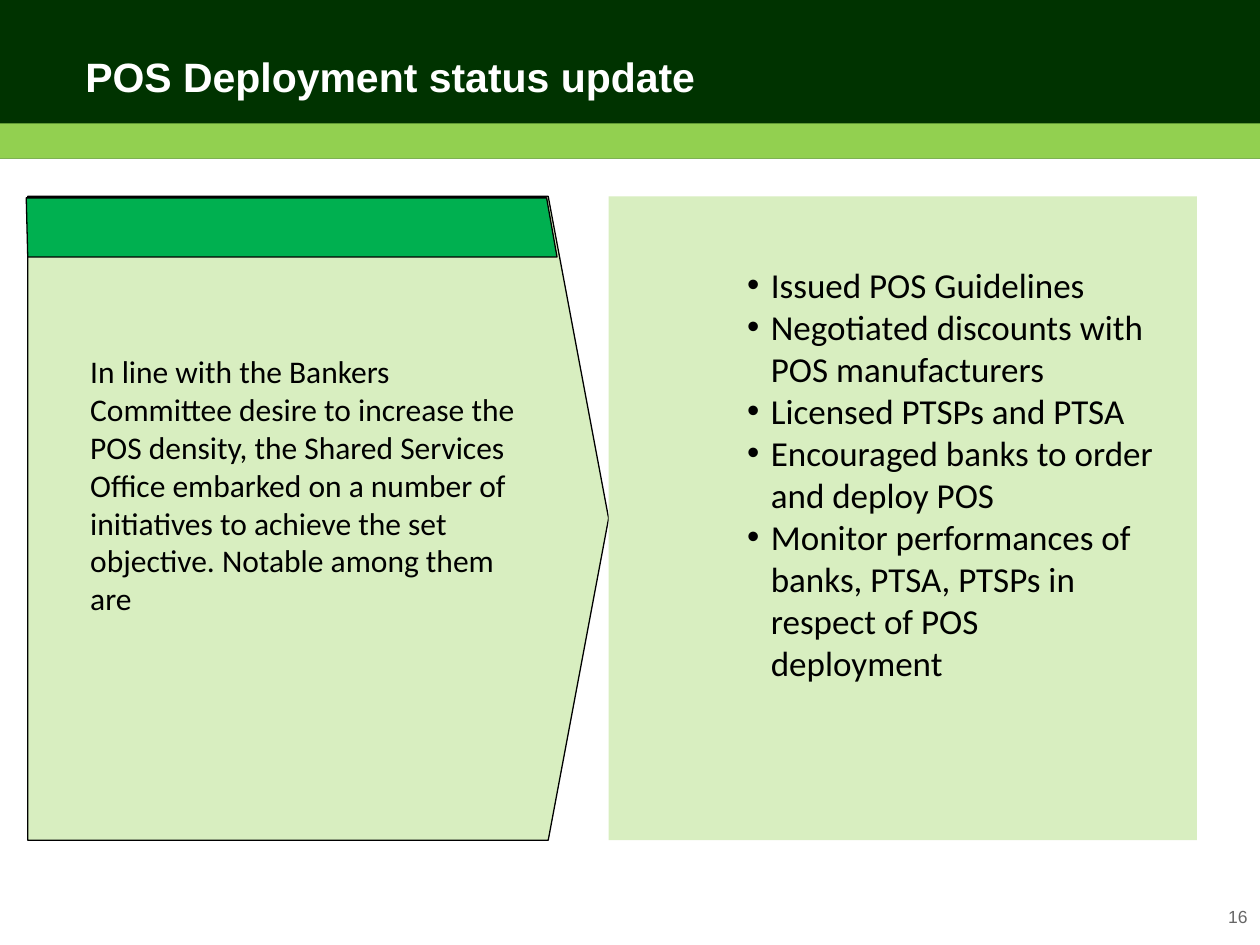
from dataclasses import dataclass

import pptx
import pptx.dml.color
import pptx.enum.shapes
import pptx.enum.text
import pptx.util
from lxml import etree

Cm = pptx.util.Cm
Pt = pptx.util.Pt
RGB = pptx.dml.color.RGBColor.from_string
SHAPE = pptx.enum.shapes.MSO_SHAPE
ANCHOR = pptx.enum.text.MSO_ANCHOR
ALIGN = pptx.enum.text.PP_ALIGN


@dataclass(frozen=True)
class Theme:
    dark: str = "003300"
    lime: str = "92D050"
    panel: str = "D8EEC0"
    green: str = "00B050"
    black: str = "000000"
    white: str = "FFFFFF"
    grey: str = "666666"
    heading_font: str = "Arial"
    body_font: str = "Calibri"
    title_size: float = 23.4
    body_size: float = 18
    list_size: float = 20
    number_size: float = 10
    outline: float = 0.75


THEME = Theme()

INITIATIVES = [
    "Issued POS Guidelines",
    "Negotiated discounts with POS manufacturers",
    "Licensed PTSPs and PTSA",
    "Encouraged banks to order and deploy POS",
    "Monitor performances of banks, PTSA, PTSPs in respect of POS deployment",
]


def paint(sp, fill, line=None):
    sp.shadow.inherit = False
    sp.fill.solid()
    sp.fill.fore_color.rgb = RGB(fill)
    if line:
        sp.line.color.rgb = RGB(line)
        sp.line.width = Pt(THEME.outline)
    else:
        sp.line.fill.background()


def add_block(s, kind, box, fill, line=None):
    sp = s.shapes.add_shape(kind, *map(Cm, box))
    paint(sp, fill, line)
    return sp


def add_polygon(s, points, fill, line):
    start, *rest = [(Cm(x), Cm(y)) for x, y in points]
    builder = s.shapes.build_freeform(*start)
    builder.add_line_segments(rest, close=True)
    paint(builder.convert_to_shape(), fill, line)


def set_bullet(p, margin, hanging):
    pPr = p._p.get_or_add_pPr()
    pPr.set("marL", str(Cm(margin)))
    pPr.set("indent", str(-Cm(hanging)))
    namespace = etree.QName(pPr).namespace
    font = etree.SubElement(pPr, f"{{{namespace}}}buFont")
    font.set("typeface", "Arial")
    char = etree.SubElement(pPr, f"{{{namespace}}}buChar")
    char.set("char", "•")


def add_text(s, box, lines, size, color, font, bold=False, bullets=False,
             align=ALIGN.LEFT, anchor=ANCHOR.TOP):
    tf = s.shapes.add_textbox(*map(Cm, box)).text_frame
    tf.word_wrap = True
    tf.vertical_anchor = anchor
    tf.text = "\n".join(lines)
    for p in tf.paragraphs:
        p.alignment = align
        if bullets:
            p.level = 1
            set_bullet(p, 1.75, 0.48)
        for r in p.runs:
            r.font.name = font
            r.font.size = Pt(size)
            r.font.bold = bold
            r.font.color.rgb = RGB(color)


def add_header(s, width):
    add_block(s, SHAPE.RECTANGLE, (0, 0, width, 3.2), THEME.dark)
    add_block(s, SHAPE.RECTANGLE, (0, 2.49, width, 0.71), THEME.lime)
    add_text(s, (1.47, 0.84, 19.5, 1.37), ["POS Deployment status update"],
             THEME.title_size, THEME.white, THEME.heading_font, bold=True,
             anchor=ANCHOR.MIDDLE)


def add_panels(s):
    top, height = 3.96, 12.98
    left, middle, right = 0.56, 12.27, 24.13
    arrow = add_block(s, SHAPE.PENTAGON, (left, top, middle - left, height),
                      THEME.panel, THEME.black)
    arrow.adjustments[0] = 0.104
    add_block(s, SHAPE.RECTANGLE, (middle, top, right - middle, height), THEME.panel)
    add_polygon(s, [(0.56, 5.18), (11.23, 5.18), (11.02, 3.99), (0.53, 3.99)],
                THEME.green, THEME.black)


def main():
    prs = pptx.Presentation()
    prs.slide_width, prs.slide_height = Cm(25.4), Cm(19.05)
    s = prs.slides.add_slide(prs.slide_layouts[6])

    add_header(s, 25.4)
    add_panels(s)
    add_text(s, (1.57, 6.98, 9.09, 5.64),
             ["In line with the Bankers Committee desire to increase the POS density, "
              "the Shared Services Office embarked on a number of initiatives to "
              "achieve the set objective. Notable among them are"],
             THEME.body_size, THEME.black, THEME.body_font)
    add_text(s, (13.54, 5.18, 9.96, 8.81), INITIATIVES,
             THEME.list_size, THEME.black, THEME.body_font, bullets=True)
    add_text(s, (24.46, 18.14, 0.94, 1.09), ["16"],
             THEME.number_size, THEME.grey, THEME.heading_font, align=ALIGN.RIGHT)

    prs.save("out.pptx")


if __name__ == "__main__":
    main()
